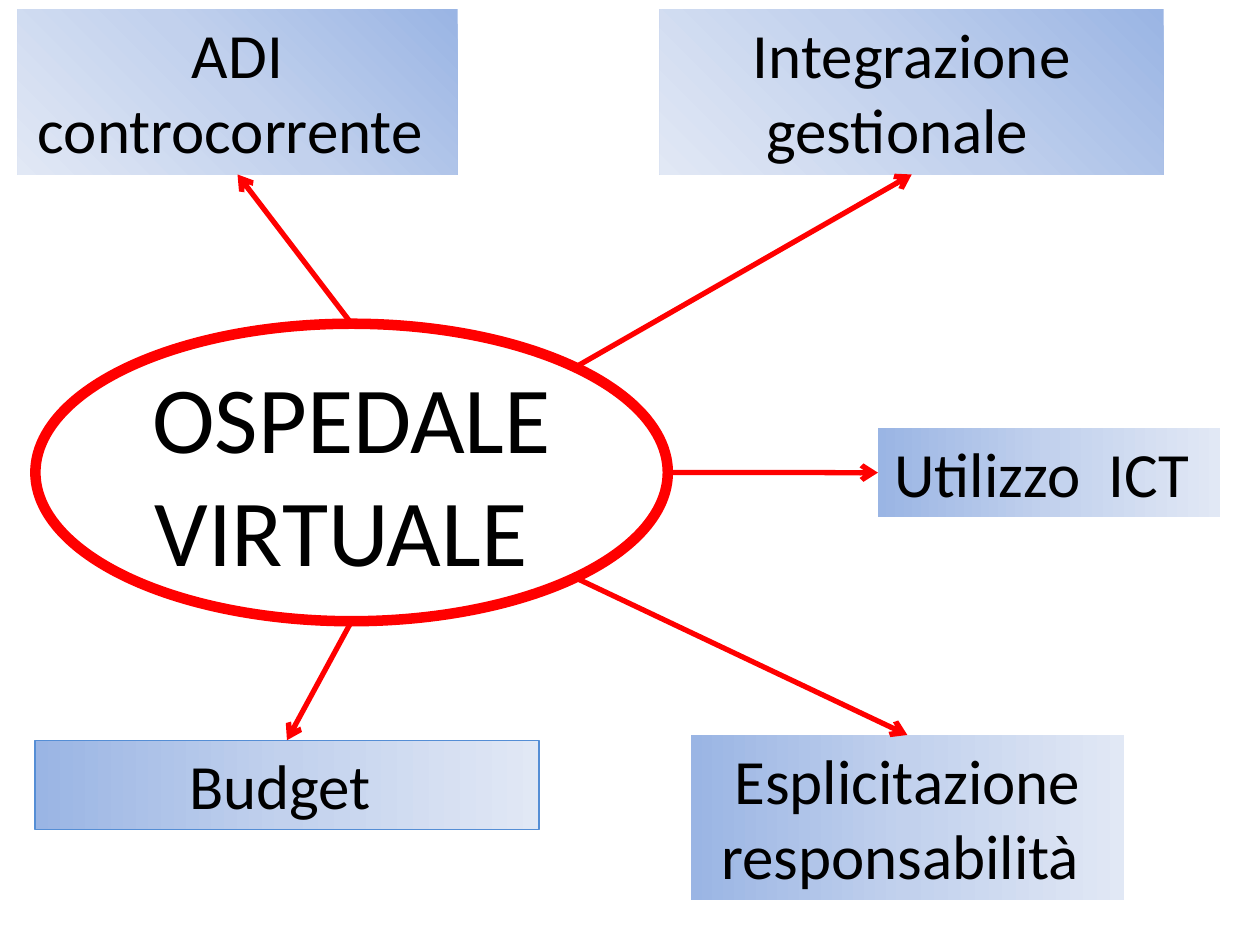
from copy import deepcopy
from math import sqrt

from pptx import Presentation
from pptx.dml.color import RGBColor
from pptx.enum.shapes import MSO_CONNECTOR as CONNECTOR, MSO_SHAPE as SHAPE
from pptx.enum.text import MSO_ANCHOR as ANCHOR, MSO_AUTO_SIZE as AUTO_SIZE, PP_ALIGN as ALIGN
from pptx.oxml.ns import qn
from pptx.oxml.xmlchemy import OxmlElement
from pptx.util import Pt

RED = RGBColor(0xFF, 0x00, 0x00)
BLACK = RGBColor(0x00, 0x00, 0x00)
BORDER = RGBColor(0x55, 0x8E, 0xD5)
GRADIENT = [
    (0, RGBColor(0x9A, 0xB5, 0xE4)),
    (0.5, RGBColor(0xC2, 0xD1, 0xED)),
    (1, RGBColor(0xE1, 0xE8, 0xF5)),
]
FONT = "Calibri"
DIAGONAL = 225
ACROSS = 0
D = sqrt(0.5)

HUB_TEXT = "OSPEDALE VIRTUALE "
HUB = (20.2, 185, 361.4, 170)

# text, (left, top, width, height), gradient angle, border,
# direction of the arrow's start on the hub, its end as a share of the box
TOPICS = [
    ("ADI controcorrente ", (10, 5.2, 251.5, 94.5), DIAGONAL, None, (0, -1), (0.5, 1)),
    ("Budget ", (20, 423, 288, 51), ACROSS, BORDER, (0, 1), (0.5, 0)),
    ("Utilizzo  ICT ", (501.7, 244.6, 195.6, 51), ACROSS, None, (1, 0), (0, 0.5)),
    ("Esplicitazione responsabilità ", (394.8, 420, 247.4, 94.5), ACROSS, None, (D, D), (0.5, 0)),
    ("Integrazione gestionale  ", (377, 5.2, 288, 94.5), DIAGONAL, None, (D, -D), (0.5, 1)),
]


def write(shape, text, size):
    frame = shape.text_frame
    frame.word_wrap = True
    para = frame.paragraphs[0]
    para.alignment = ALIGN.CENTER
    span = para.add_run()
    span.text = text
    span.font.name = FONT
    span.font.size = Pt(size)
    span.font.color.rgb = BLACK


def shade(box, angle):
    box.fill.gradient()
    box.fill.gradient_angle = angle
    stop_list = box.element.spPr.find(qn("a:gradFill")).find(qn("a:gsLst"))
    stop_list.append(deepcopy(stop_list[0]))
    for stop, (position, color) in zip(box.fill.gradient_stops, GRADIENT):
        stop.position = position
        stop.color.rgb = color


def add_topic(page, text, area, angle, border):
    box = page.shapes.add_textbox(*map(Pt, area))
    shade(box, angle)
    if border:
        box.line.color.rgb = border
        box.line.width = Pt(0.75)
    write(box, text, 36)
    box.text_frame.auto_size = AUTO_SIZE.SHAPE_TO_FIT_TEXT


def add_hub(page):
    hub = page.shapes.add_shape(SHAPE.OVAL, *map(Pt, HUB))
    hub.shadow.inherit = False
    hub.fill.background()
    hub.line.color.rgb = RED
    hub.line.width = Pt(6)
    write(hub, HUB_TEXT, 54)
    hub.text_frame.vertical_anchor = ANCHOR.MIDDLE


def point_in(area, across, down):
    left, top, width, height = area
    return Pt(left + width * across), Pt(top + height * down)


def add_arrow(page, start, end):
    arrow = page.shapes.add_connector(CONNECTOR.STRAIGHT, *start, *end)
    arrow.line.color.rgb = RED
    arrow.line.width = Pt(3)
    tip = OxmlElement("a:tailEnd")
    tip.set("type", "arrow")
    arrow.line._get_or_add_ln().append(tip)
    arrow.element.spPr.append(OxmlElement("a:effectLst"))


def main():
    deck = Presentation()
    deck.slide_width, deck.slide_height = Pt(720), Pt(540)
    page = deck.slides.add_slide(deck.slide_layouts[6])
    for text, area, angle, border, _, _ in TOPICS:
        add_topic(page, text, area, angle, border)
    add_hub(page)
    for _, area, _, _, (across, down), target in TOPICS:
        start = point_in(HUB, (1 + across) / 2, (1 + down) / 2)
        add_arrow(page, start, point_in(area, *target))
    deck.save("out.pptx")


if __name__ == "__main__":
    main()
